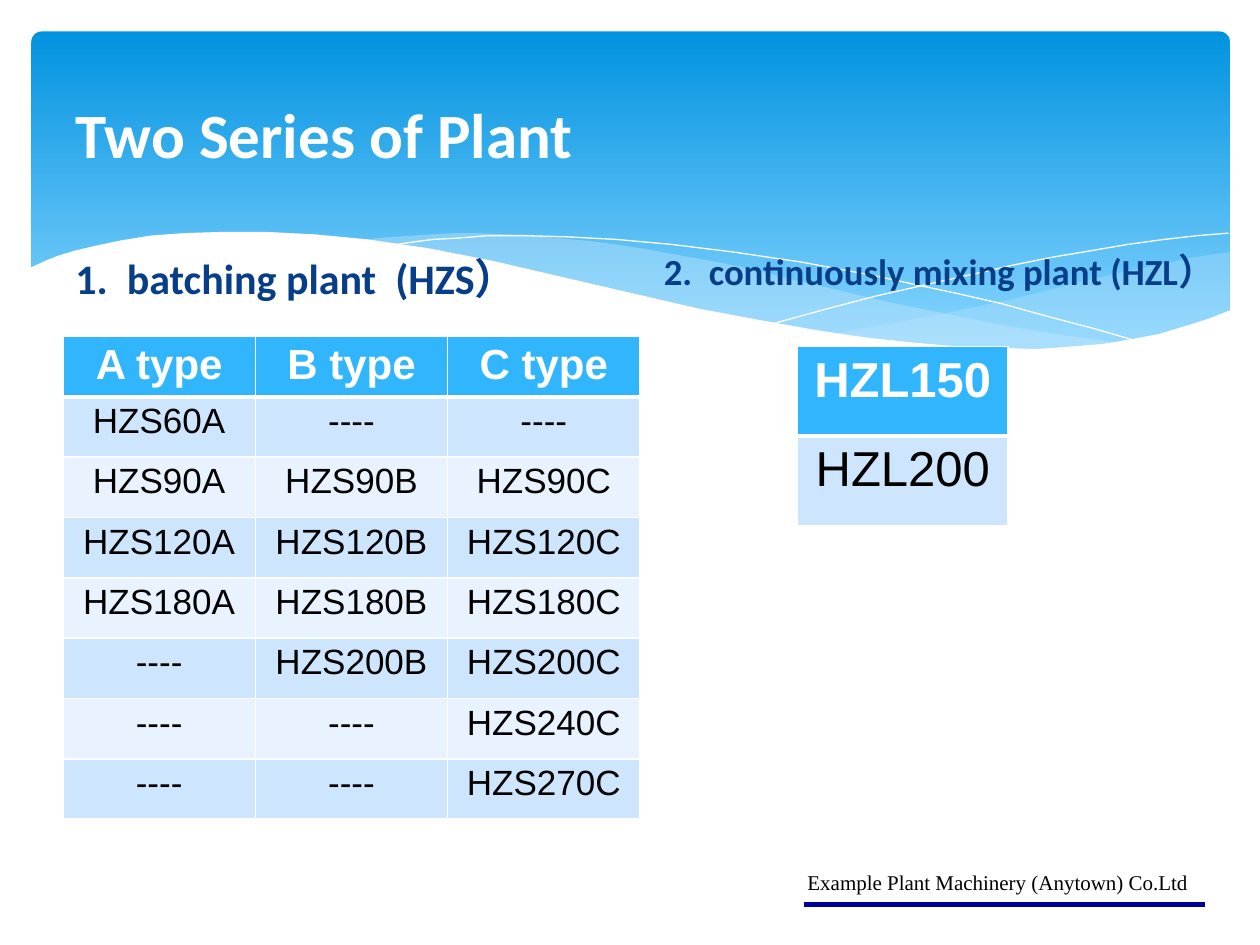
from lxml.etree import SubElement
from pptx import Presentation
from pptx.dml.color import RGBColor
from pptx.enum.shapes import MSO_CONNECTOR as Connector, MSO_SHAPE as Shape
from pptx.enum.text import MSO_ANCHOR as Anchor, PP_ALIGN as Align
from pptx.oxml.ns import qn
from pptx.util import Inches, Pt

COLORS = {
    "white": "FFFFFF", "black": "000000", "navy": "000099", "heading": "073E87",
    "sky_top": "0293E0", "sky_bottom": "83D3FE", "mist": "C6E7FC",
    "header": "31B6FD", "odd": "CEE5FE", "even": "E8F3FF",
}

RIGHT_SWELL = [
    (9.76, 2), (9.48, 2.04), (9.21, 2.1), (8.91, 2.16), (8.61, 2.23), (8.05, 2.37),
    (7.53, 2.48), (7.06, 2.57), (6.61, 2.65), (6.91, 2.69), (7.19, 2.72), (7.45, 2.75),
    (7.69, 2.77), (8.03, 2.78), (8.35, 2.77), (8.63, 2.75), (8.89, 2.72), (9.13, 2.67),
    (9.35, 2.62), (9.49, 2.57), (9.63, 2.52), (9.76, 2.47),
]
MIDDLE_SWELL = [
    (8.93, 2.73), (8.66, 2.69), (8.37, 2.65), (8.07, 2.6), (7.75, 2.54), (7.41, 2.47),
    (7.06, 2.4), (6.68, 2.31), (6.29, 2.22), (5.98, 2.14), (5.69, 2.08), (5.41, 2.03),
    (5.14, 1.98), (4.89, 1.94), (4.65, 1.91), (4.42, 1.89), (4.2, 1.87), (3.99, 1.86),
    (3.8, 1.85), (3.61, 1.85), (3.28, 1.87), (2.99, 1.89), (2.86, 1.91), (3.23, 1.96),
    (3.62, 2.03), (4.04, 2.11), (4.49, 2.22), (4.91, 2.32), (5.3, 2.4), (5.66, 2.48),
    (6.01, 2.55), (6.34, 2.61), (6.65, 2.66), (6.95, 2.7), (7.22, 2.74), (7.48, 2.76),
    (7.73, 2.77), (7.96, 2.78), (8.28, 2.78), (8.57, 2.77), (8.76, 2.75),
]
FALLING_LINE = [
    (3.09, 1.95), (3.28, 1.92), (3.44, 1.9), (3.63, 1.89), (3.87, 1.87), (4.16, 1.87),
    (4.5, 1.88), (4.89, 1.9), (5.33, 1.94), (5.82, 2), (6.36, 2.08), (6.95, 2.19),
    (7.27, 2.26), (7.6, 2.33), (7.95, 2.41), (8.31, 2.51), (8.69, 2.61), (9.07, 2.72),
]
RISING_LINE = [
    (6.13, 2.57), (6.53, 2.46), (6.95, 2.35), (7.48, 2.23), (8.06, 2.1), (8.36, 2.04),
    (8.66, 1.99), (8.95, 1.94), (9.24, 1.9), (9.51, 1.87), (9.75, 1.85),
]
WHITE_WAVE = [
    (9.77, 2.46), (9.59, 2.53), (9.4, 2.59), (9.2, 2.65), (8.99, 2.69), (8.75, 2.73),
    (8.5, 2.75), (8.23, 2.77), (7.93, 2.76), (7.61, 2.75), (7.26, 2.72), (6.88, 2.68),
    (6.48, 2.62), (6.03, 2.54), (5.55, 2.45), (5.03, 2.33), (4.47, 2.2), (3.91, 2.07),
    (3.4, 1.97), (2.92, 1.9), (2.5, 1.86), (2.11, 1.84), (1.77, 1.84), (1.46, 1.85),
    (1.19, 1.87), (0.95, 1.91), (0.76, 1.95), (0.59, 1.99), (0.46, 2.03), (0.36, 2.07),
    (0.23, 2.13), (0.23, 3.29), (9.77, 3.29),
]
WAVES = [
    (RIGHT_SWELL, "mist", 29), (MIDDLE_SWELL, "mist", 40),
    (FALLING_LINE, None, None), (RISING_LINE, None, None),
    (WHITE_WAVE, "white", 100),
]

TEXTS = [
    ("Example Plant Machinery (Anytown) Co.Ltd", (6.31, 6.85, 3.41, 0.4),
     dict(size=12, font="Times New Roman", color="black"), Anchor.TOP),
    ("Two Series of Plant", (0.5, 0.37, 9, 1.37),
     dict(size=36, color="white", bold=True), Anchor.MIDDLE),
    ("1.  batching plant  (HZS）", (0.5, 1.75, 4.42, 0.7),
     dict(size=24, color="heading", bold=True), Anchor.BOTTOM),
    ("2.  continuously mixing plant (HZL）", (5.17, 1.67, 4.58, 0.7),
     dict(size=21, color="heading", bold=True), Anchor.BOTTOM),
]

NONE = "----"
BATCHING = [
    ("A type", "B type", "C type"),
    ("HZS60A", NONE, NONE),
    ("HZS90A", "HZS90B", "HZS90C"),
    ("HZS120A", "HZS120B", "HZS120C"),
    ("HZS180A", "HZS180B", "HZS180C"),
    (NONE, "HZS200B", "HZS200C"),
    (NONE, NONE, "HZS240C"),
    (NONE, NONE, "HZS270C"),
]
CONTINUOUS = [("HZL150",), ("HZL200",)]


def rgb(name):
    return RGBColor.from_string(COLORS[name])


def write(frame, text, size=20, font="Calibri", color="black", bold=False, align=Align.LEFT):
    para = frame.paragraphs[0]
    para.alignment = align
    span = para.add_run()
    span.text = text
    span.font.size = Pt(size)
    span.font.name = font
    span.font.bold = bold
    span.font.color.rgb = rgb(color)


def add_text(page, text, place, style, anchor):
    frame = page.shapes.add_textbox(*map(Inches, place)).text_frame
    frame.word_wrap = True
    frame.vertical_anchor = anchor
    write(frame, text, **style)


def add_banner(page):
    banner = page.shapes.add_shape(
        Shape.ROUNDED_RECTANGLE, *map(Inches, (0.25, 0.25, 9.51, 2.7)))
    banner.adjustments[0] = 0.03
    banner.shadow.inherit = False
    banner.line.fill.background()
    banner.fill.gradient()
    banner.fill.gradient_angle = 270
    for stop, color, position in zip(
            banner.fill.gradient_stops, ("sky_top", "sky_bottom"), (0, 0.9)):
        stop.color.rgb = rgb(color)
        stop.position = position


def add_wave(page, points, color, opacity):
    (start_x, start_y), *rest = [(x * 100, y * 100) for x, y in points]
    builder = page.shapes.build_freeform(start_x, start_y, scale=Inches(0.01))
    builder.add_line_segments(rest, close=color is not None)
    wave = builder.convert_to_shape()
    wave.shadow.inherit = False
    if color is None:
        wave.fill.background()
        wave.line.color.rgb = rgb("white")
        wave.line.width = Pt(0)
        return
    wave.line.fill.background()
    wave.fill.solid()
    wave.fill.fore_color.rgb = rgb(color)
    if opacity < 100:
        tint = wave.fill._xPr.find(".//" + qn("a:srgbClr"))
        SubElement(tint, qn("a:alpha"), val=str(opacity * 1000))


def add_footer_rule(page):
    rule = page.shapes.add_connector(
        Connector.STRAIGHT, *map(Inches, (6.38, 7.18, 9.56, 7.18)))
    rule.line.color.rgb = rgb("navy")
    rule.line.width = Pt(3)
    SubElement(rule._element.spPr, qn("a:effectLst"))


def set_borders(cell, widths):
    properties = cell._tc.get_or_add_tcPr()
    for side, width in widths.items():
        edge = SubElement(properties, qn("a:ln" + side), w=str(Pt(width)))
        paint = SubElement(edge, qn("a:solidFill"))
        SubElement(paint, qn("a:srgbClr"), val=COLORS["white"])


def add_grid(page, rows, place, header_size, body_size, margins):
    grid = page.shapes.add_table(len(rows), len(rows[0]), *map(Inches, place)).table
    for row_index, values in enumerate(rows):
        header = row_index == 0
        fill = "header" if header else "odd" if row_index % 2 else "even"
        for column_index, value in enumerate(values):
            cell = grid.cell(row_index, column_index)
            cell.margin_left = cell.margin_right = Inches(margins[0])
            cell.margin_top = cell.margin_bottom = Inches(margins[1])
            set_borders(cell, {"L": 1, "R": 1, "T": 3 if row_index == 1 else 1,
                               "B": 3 if header else 1})
            cell.fill.solid()
            cell.fill.fore_color.rgb = rgb(fill)
            write(cell.text_frame, value, size=header_size if header else body_size,
                  font="Arial", color="white" if header else "black",
                  bold=header, align=Align.CENTER)


def main():
    deck = Presentation()
    deck.slide_width, deck.slide_height = Inches(10), Inches(7.5)
    page = deck.slides.add_slide(deck.slide_layouts[6])
    add_banner(page)
    for wave in WAVES:
        add_wave(page, *wave)
    add_footer_rule(page)
    for entry in TEXTS:
        add_text(page, *entry)
    add_grid(page, BATCHING, (0.5, 2.67, 4.58, 3.83), 24, 20, (0.04, 0.04))
    add_grid(page, CONTINUOUS, (6.33, 2.75, 1.67, 1.42), 28, 28, (0.1, 0.05))
    deck.save("out.pptx")


if __name__ == "__main__":
    main()
